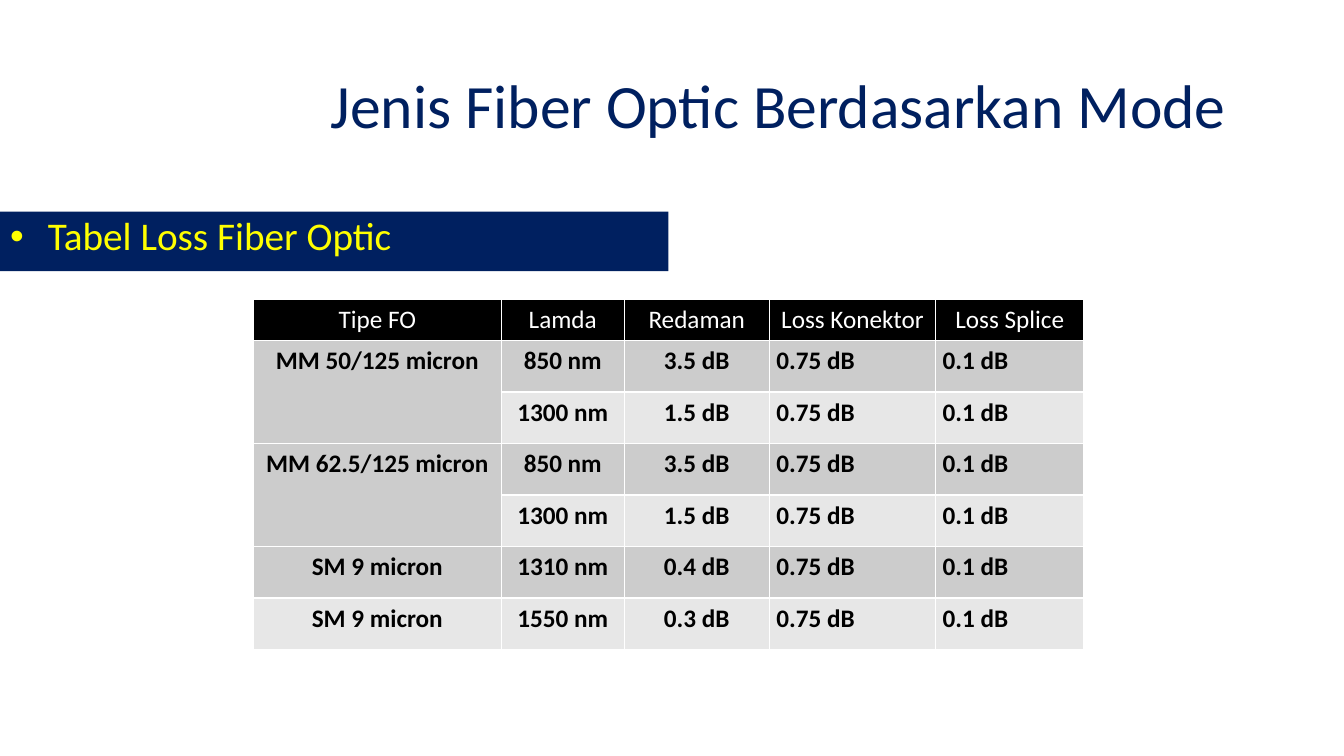
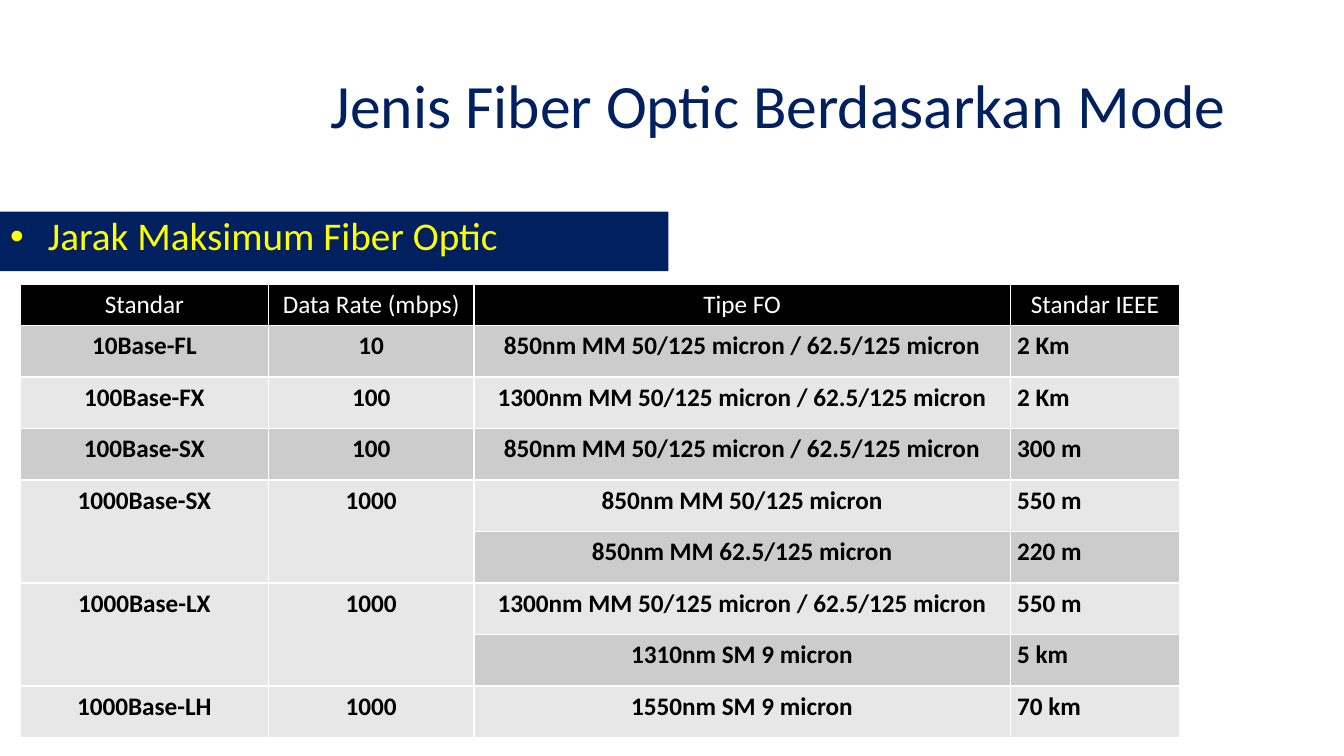
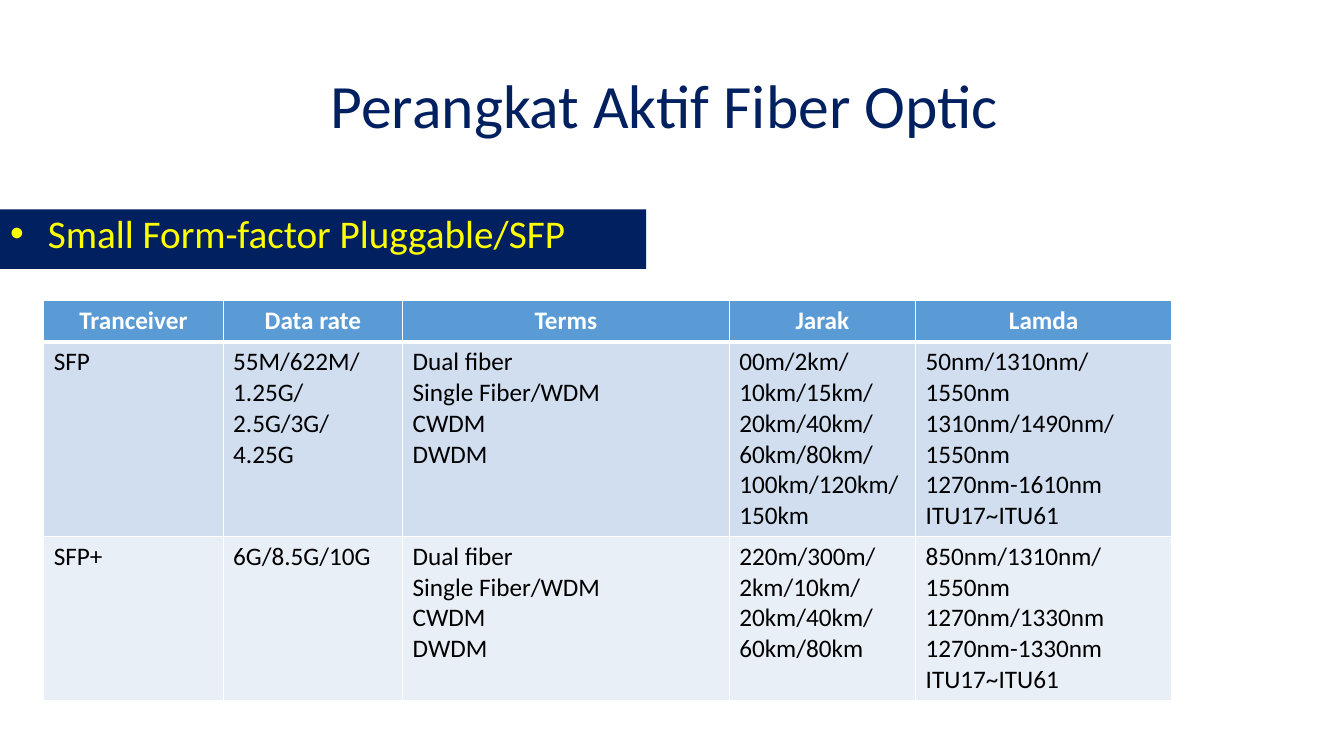
from lxml import etree
from pptx import Presentation
from pptx.dml.color import RGBColor
from pptx.enum.text import MSO_ANCHOR, MSO_AUTO_SIZE, PP_ALIGN
from pptx.oxml.ns import qn
from pptx.util import Pt

LEFT, CENTER = PP_ALIGN.LEFT, PP_ALIGN.CENTER
TOP, MIDDLE = MSO_ANCHOR.TOP, MSO_ANCHOR.MIDDLE
NO_AUTOFIT = MSO_AUTO_SIZE.NONE

FONT = "Calibri"
NAVY, YELLOW, WHITE, BLACK = "002060", "FFFF00", "FFFFFF", "000000"
TITLE_BOX = (229, 25.2, 726.5, 104.4)
THIN = 0.96

GRAY_STYLE = {
    "header_fill": BLACK, "bands": ("CCCCCC", "E7E7E7"), "header_bold": False,
    "body_bold": True, "centered_columns": 3, "side_margin": 5, "header_rule": THIN,
}
BLUE_STYLE = {
    "header_fill": "5B9BD5", "bands": ("D1DEEF", "E9EFF7"), "header_bold": True,
    "body_bold": False, "centered_columns": 0, "side_margin": 7.2, "header_rule": 3,
}
TERMS = "Dual fiber\nSingle Fiber/WDM\nCWDM\nDWDM"

SLIDES = [
    {
        "title": "Jenis Fiber Optic Berdasarkan Mode",
        "band": "Tabel Loss Fiber Optic",
        "band_box": (0, 151.2, 477.4, 42.5),
        "style": GRAY_STYLE,
        "origin": (181, 214),
        "columns": (177.1, 87.8, 103.7, 118.8, 105.8),
        "heights": (28.4,) + (36.8,) * 6,
        "rows": [
            ("Tipe FO", "Lamda", "Redaman", "Loss Konektor", "Loss Splice"),
            ("MM 50/125 micron", "850 nm", "3.5 dB", "0.75 dB", "0.1 dB"),
            (None, "1300 nm", "1.5 dB", "0.75 dB", "0.1 dB"),
            ("MM 62.5/125 micron", "850 nm", "3.5 dB", "0.75 dB", "0.1 dB"),
            (None, "1300 nm", "1.5 dB", "0.75 dB", "0.1 dB"),
            ("SM 9 micron", "1310 nm", "0.4 dB", "0.75 dB", "0.1 dB"),
            ("SM 9 micron", "1550 nm", "0.3 dB", "0.75 dB", "0.1 dB"),
        ],
    },
    {
        "title": "Jenis Fiber Optic Berdasarkan Mode",
        "band": "Jarak Maksimum Fiber Optic",
        "band_box": (0, 151.2, 477.4, 42.5),
        "style": GRAY_STYLE,
        "origin": (14.6, 203.3),
        "columns": (177.1, 146.9, 383, 121),
        "heights": (28.4,) + (36.8,) * 8,
        "rows": [
            ("Standar", "Data Rate (mbps)", "Tipe FO", "Standar IEEE"),
            ("10Base-FL", "10", "850nm MM 50/125 micron / 62.5/125 micron", "2 Km"),
            ("100Base-FX", "100", "1300nm MM 50/125 micron / 62.5/125 micron", "2 Km"),
            ("100Base-SX", "100", "850nm MM 50/125 micron / 62.5/125 micron", "300 m"),
            ("1000Base-SX", "1000", "850nm MM 50/125 micron", "550 m"),
            (None, None, "850nm MM 62.5/125 micron", "220 m"),
            ("1000Base-LX", "1000", "1300nm MM 50/125 micron / 62.5/125 micron", "550 m"),
            (None, None, "1310nm SM 9 micron", "5 km"),
            ("1000Base-LH", "1000", "1550nm SM 9 micron", "70 km"),
        ],
    },
    {
        "title": "Perangkat Aktif Fiber Optic",
        "band": "Small Form-factor Pluggable/SFP",
        "band_box": (0, 149.6, 461.5, 42.5),
        "style": BLUE_STYLE,
        "origin": (31.2, 214.9),
        "columns": (128.2, 128.2, 233.3, 133.2, 182.9),
        "heights": (29.2, 139, 117),
        "rows": [
            ("Tranceiver", "Data rate", "Terms", "Jarak", "Lamda"),
            ("SFP", "55M/622M/\n1.25G/\n2.5G/3G/\n4.25G", TERMS,
             "00m/2km/\n10km/15km/\n20km/40km/\n60km/80km/\n100km/120km/\n150km",
             "50nm/1310nm/1550nm\n1310nm/1490nm/1550nm\n1270nm-1610nm\nITU17~ITU61"),
            ("SFP+", "6G/8.5G/10G", TERMS,
             "220m/300m/\n2km/10km/\n20km/40km/\n60km/80km",
             "850nm/1310nm/1550nm\n1270nm/1330nm\n1270nm-1330nm\nITU17~ITU61"),
        ],
    },
]


def color(value):
    return RGBColor.from_string(value)


def write_text(frame, text, size=18, fill=BLACK, bold=False, align=LEFT, spacing=1.0):
    frame.text = text
    frame.word_wrap = True
    for paragraph in frame.paragraphs:
        paragraph.alignment = align
        paragraph.line_spacing = spacing
        paragraph.space_before = Pt(0)
        paragraph.font.name = FONT
        paragraph.font.size = Pt(size)
        paragraph.font.bold = bold
        paragraph.font.color.rgb = color(fill)


def place(shape, box):
    shape.left, shape.top, shape.width, shape.height = map(Pt, box)


def remove_bullet(paragraph):
    properties = paragraph._p.get_or_add_pPr()
    properties.set("marL", "0")
    properties.set("indent", "0")
    etree.SubElement(properties, qn("a:buNone"))


def set_borders(cell, top, bottom):
    properties = cell._tc.get_or_add_tcPr()
    for side, width in (("L", THIN), ("R", THIN), ("T", top), ("B", bottom)):
        line = etree.SubElement(properties, qn("a:ln" + side), w=str(int(Pt(width))))
        fill = etree.SubElement(line, qn("a:solidFill"))
        etree.SubElement(fill, qn("a:srgbClr"), val=WHITE)


def add_heading(slide, content):
    title, band = slide.shapes.title, slide.placeholders[1]
    place(title, TITLE_BOX)
    write_text(title.text_frame, content["title"], size=44, fill=NAVY, spacing=0.9)
    title.text_frame.vertical_anchor = MIDDLE
    title.text_frame.auto_size = NO_AUTOFIT

    place(band, content["band_box"])
    band.fill.solid()
    band.fill.fore_color.rgb = color(NAVY)
    remove_bullet(band.text_frame.paragraphs[0])
    write_text(band.text_frame, content["band"], size=28, fill=YELLOW, spacing=0.9)
    band.text_frame.vertical_anchor = TOP
    band.text_frame.auto_size = NO_AUTOFIT


def format_cell(cell, row, column, style):
    header = row == 0
    set_borders(cell,
                top=style["header_rule"] if row == 1 else THIN,
                bottom=style["header_rule"] if header else THIN)
    cell.fill.solid()
    cell.fill.fore_color.rgb = color(
        style["header_fill"] if header else style["bands"][(row - 1) % 2])
    cell.margin_left = cell.margin_right = Pt(style["side_margin"])
    cell.margin_top = cell.margin_bottom = Pt(3.6)
    cell.vertical_anchor = TOP


def add_data_table(slide, content):
    rows, columns, heights = content["rows"], content["columns"], content["heights"]
    style = content["style"]
    frame = slide.shapes.add_table(
        len(rows), len(columns), *map(Pt, content["origin"]),
        Pt(sum(columns)), Pt(sum(heights)))
    table = frame.table
    table.horz_banding = False
    for table_column, width in zip(table.columns, columns):
        table_column.width = Pt(width)
    for table_row, height in zip(table.rows, heights):
        table_row.height = Pt(height)

    for row, values in enumerate(rows):
        header = row == 0
        for column, value in enumerate(values):
            cell = table.cell(row, column)
            format_cell(cell, row, column, style)
            if value is None:
                table.cell(row - 1, column).merge(cell)
                continue
            centered = header or column < style["centered_columns"]
            write_text(cell.text_frame, value,
                       fill=WHITE if header else BLACK,
                       bold=style["header_bold" if header else "body_bold"],
                       align=CENTER if centered else LEFT)


def main():
    presentation = Presentation()
    presentation.slide_width, presentation.slide_height = Pt(960), Pt(540)
    layout = presentation.slide_layouts[1]
    for content in SLIDES:
        slide = presentation.slides.add_slide(layout)
        add_heading(slide, content)
        add_data_table(slide, content)
    presentation.save("out.pptx")


if __name__ == "__main__":
    main()
